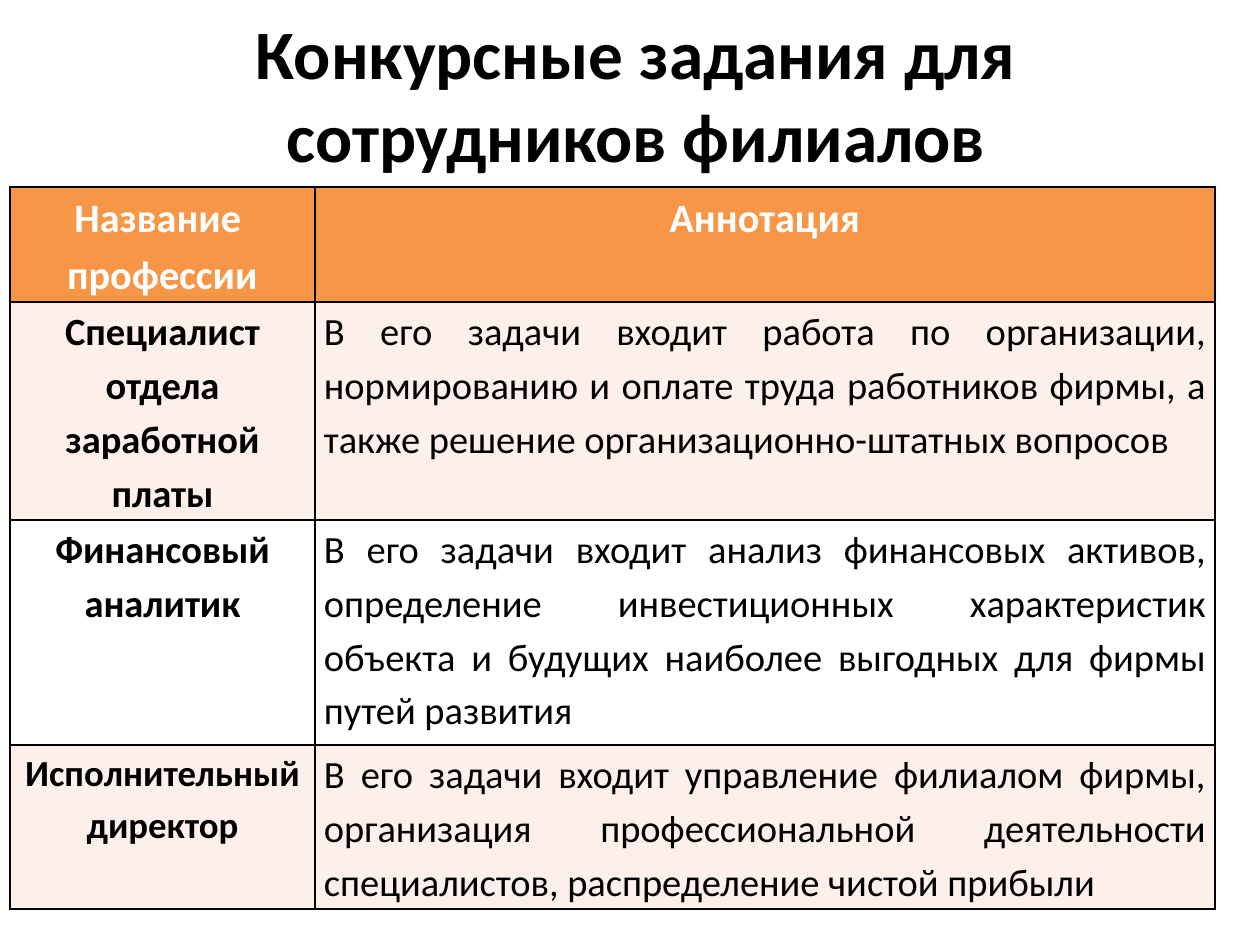
from lxml.etree import SubElement
from pptx import Presentation
from pptx.dml.color import RGBColor
from pptx.enum.text import MSO_ANCHOR, PP_ALIGN
from pptx.oxml.ns import qn
from pptx.util import Emu, Pt

PX = 914400 // 126
FONT = "Calibri"
BLACK = RGBColor(0x00, 0x00, 0x00)
WHITE = RGBColor(0xFF, 0xFF, 0xFF)
ORANGE = RGBColor(0xF7, 0x96, 0x46)
PEACH = RGBColor(0xFD, 0xEF, 0xE9)

TITLE = "Конкурсные задания для сотрудников филиалов"
COLS = (305, 900)
# height, fill, text colour, sizes, texts
ROWS = (
    (115, ORANGE, WHITE, (23, 23), ("Название \nпрофессии", "Аннотация")),
    (218, PEACH, BLACK, (22, 22), (
        "Специалист отдела заработной платы",
        "В его задачи входит работа по организации, нормированию и оплате "
        "труда работников фирмы, а также решение организационно-штатных "
        "вопросов")),
    (225, WHITE, BLACK, (22, 22), (
        "Финансовый аналитик",
        "В его задачи входит анализ финансовых активов, определение "
        "инвестиционных характеристик объекта и будущих наиболее выгодных "
        "для фирмы путей развития")),
    (164, PEACH, BLACK, (21, 22), (
        "Исполнительный директор",
        "В его задачи входит управление филиалом фирмы, организация "
        "профессиональной деятельности специалистов, распределение чистой "
        "прибыли")),
)


def px(n):
    return Emu(n * PX)


def style(frame, size, color, bold, align, gap=1.0):
    for para in frame.paragraphs:
        para.alignment = align
        para.line_spacing = gap
        for run in para.runs:
            font = run.font
            font.name, font.size, font.bold = FONT, Pt(size), bold
            font.color.rgb = color


def add_title(slide, x, y, w, h):
    frame = slide.shapes.add_textbox(px(x), px(y), px(w), px(h)).text_frame
    frame.word_wrap = True
    frame.vertical_anchor = MSO_ANCHOR.MIDDLE
    frame.text = TITLE
    style(frame, 39.6, BLACK, True, PP_ALIGN.CENTER)


def add_rules(cell):
    """Draw a thin black line on all four sides of a cell."""
    props = cell._tc.get_or_add_tcPr()
    for side in ("a:lnL", "a:lnR", "a:lnT", "a:lnB"):
        line = SubElement(props, qn(side), w=str(Pt(1)))
        fill = SubElement(line, qn("a:solidFill"))
        SubElement(fill, qn("a:srgbClr"), val=str(BLACK))


def fill_cell(cell, text, size, color, back, bold, align):
    cell.margin_left = cell.margin_right = px(9)
    cell.margin_top = cell.margin_bottom = 0
    add_rules(cell)
    cell.fill.solid()
    cell.fill.fore_color.rgb = back
    cell.text_frame.text = text
    style(cell.text_frame, size, color, bold, align, 1.15)


def add_jobs(slide, x, y):
    high = sum(row[0] for row in ROWS)
    table = slide.shapes.add_table(
        len(ROWS), len(COLS), px(x), px(y), px(sum(COLS)), px(high)).table
    for col, width in zip(table.columns, COLS):
        col.width = px(width)
    for r, (height, back, color, sizes, texts) in enumerate(ROWS):
        table.rows[r].height = px(height)
        for c, (size, text) in enumerate(zip(sizes, texts)):
            head = r == 0 or c == 0
            align = PP_ALIGN.CENTER if head else PP_ALIGN.JUSTIFY
            fill_cell(table.cell(r, c), text, size, color, back, head, align)


def main():
    deck = Presentation()
    deck.slide_width, deck.slide_height = px(1260), px(945)
    slide = deck.slides.add_slide(deck.slide_layouts[6])
    add_title(slide, 69, 20, 1134, 147)
    add_jobs(slide, 10, 187)
    deck.save("out.pptx")


if __name__ == "__main__":
    main()
